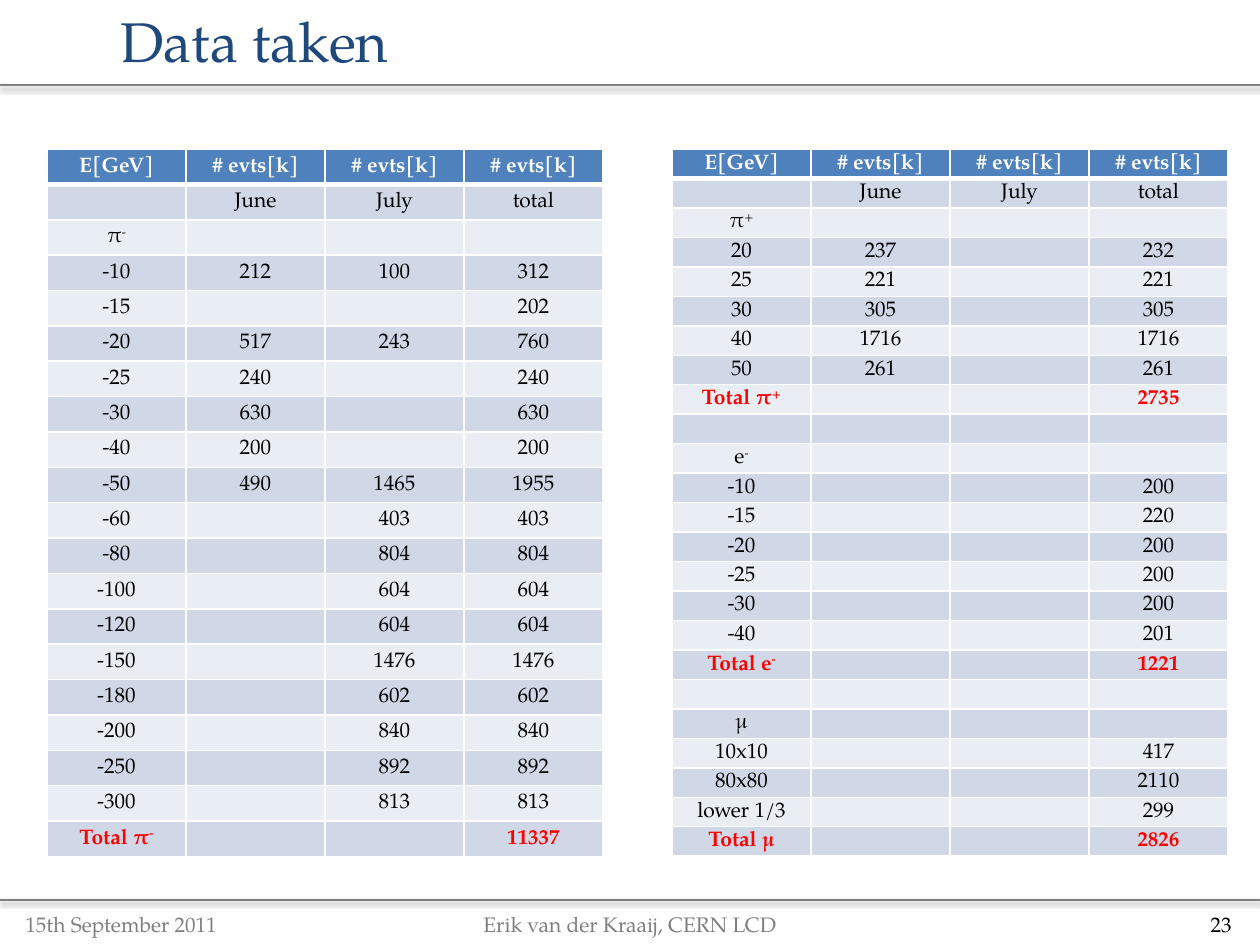
from lxml.etree import SubElement
from pptx import Presentation
from pptx.dml.color import RGBColor
from pptx.enum.shapes import MSO_CONNECTOR
from pptx.enum.text import MSO_ANCHOR as Anchor, PP_ALIGN as Align
from pptx.oxml.ns import qn
from pptx.util import Emu, Pt

WHITE = RGBColor(0xFF, 0xFF, 0xFF)
BLACK = RGBColor(0x00, 0x00, 0x00)
RED = RGBColor(0xFF, 0x00, 0x00)
NAVY = RGBColor(0x1F, 0x49, 0x7D)
HEADER_BLUE = RGBColor(0x4F, 0x81, 0xBD)
DARK_BAND = RGBColor(0xD0, 0xD8, 0xE8)
LIGHT_BAND = RGBColor(0xE9, 0xED, 0xF4)
RULE_GREY = RGBColor(0x80, 0x80, 0x80)
FOOTER_GREY = RGBColor(0x7F, 0x7F, 0x7F)

FONT = "TeX Gyre Pagella"
EMU_PER_PX = 914400 / 126
SLIDE_W, SLIDE_H = 1260, 945

HEADINGS = [
    ("E[GeV]", "# evts[k]", "# evts[k]", "# evts[k]"),
    ("", "June", "July", "total"),
]
BLANK = ("", "", "", "")


def label_row(label):
    return (label, "", "", "")


def total_row(label, total):
    return (label, "", "", total)


# A caret marks the start of a superscript.
PION_MINUS = HEADINGS + [
    label_row("π^-"),
    ("-10", "212", "100", "312"),
    total_row("-15", "202"),
    ("-20", "517", "243", "760"),
    ("-25", "240", "", "240"),
    ("-30", "630", "", "630"),
    ("-40", "200", "", "200"),
    ("-50", "490", "1465", "1955"),
    ("-60", "", "403", "403"),
    ("-80", "", "804", "804"),
    ("-100", "", "604", "604"),
    ("-120", "", "604", "604"),
    ("-150", "", "1476", "1476"),
    ("-180", "", "602", "602"),
    ("-200", "", "840", "840"),
    ("-250", "", "892", "892"),
    ("-300", "", "813", "813"),
    total_row("Total π^-", "11337"),
]
OTHER_PARTICLES = HEADINGS + [
    label_row("π^+"),
    ("20", "237", "", "232"),
    ("25", "221", "", "221"),
    ("30", "305", "", "305"),
    ("40", "1716", "", "1716"),
    ("50", "261", "", "261"),
    total_row("Total π^+", "2735"),
    BLANK,
    label_row("e^-"),
    total_row("-10", "200"),
    total_row("-15", "220"),
    total_row("-20", "200"),
    total_row("-25", "200"),
    total_row("-30", "200"),
    total_row("-40", "201"),
    total_row("Total e^-", "1221"),
    BLANK,
    label_row("μ"),
    total_row("10x10", "417"),
    total_row("80x80", "2110"),
    total_row("lower 1/3", "299"),
    total_row("Total μ", "2826"),
]


def px(length):
    return Emu(round(length * EMU_PER_PX))


class SlideBuilder:
    """Holds the text style and the slide being built."""

    def __init__(self, slide, font=FONT, size=12):
        self.slide = slide
        self.font = font
        self.size = size

    def format(self, paragraph, color, align, size=None, bold=False):
        paragraph.alignment = align
        font = paragraph.font
        font.name, font.size, font.bold = self.font, Pt(size or self.size), bold
        font.color.rgb = color

    def title(self, text, left, top, width, height):
        title = self.slide.shapes.title
        title.left, title.top, title.width, title.height = map(px, (left, top, width, height))
        title.text_frame.text = text
        title.text_frame.vertical_anchor = Anchor.MIDDLE
        self.format(title.text_frame.paragraphs[0], NAVY, Align.LEFT, size=32)

    def text(self, text, left, top, width, height, color, align):
        frame = self.slide.shapes.add_textbox(*map(px, (left, top, width, height))).text_frame
        frame.word_wrap = True
        frame.vertical_anchor = Anchor.MIDDLE
        frame.text = text
        self.format(frame.paragraphs[0], color, align)

    def rule(self, y):
        """Draw a full-width line with a soft shadow below it."""
        rule = self.slide.shapes.add_connector(
            MSO_CONNECTOR.STRAIGHT, 0, px(y), px(SLIDE_W), px(y))
        rule.line.color.rgb = RULE_GREY
        rule.line.width = Pt(1)
        effects = SubElement(rule._element.spPr, qn("a:effectLst"))
        shadow = SubElement(effects, qn("a:outerShdw"), blurRad=str(Pt(3.1)),
                            dist=str(Pt(1.6)), dir="5400000", rotWithShape="0")
        shadow_color = SubElement(shadow, qn("a:srgbClr"), val=str(BLACK))
        SubElement(shadow_color, qn("a:alpha"), val="38000")

    def table(self, rows, left, top, width, height):
        table = self.slide.shapes.add_table(
            len(rows), len(rows[0]), *map(px, (left, top, width, height))).table
        for column in table.columns:
            column.width = px(width / len(rows[0]))
        for r, values in enumerate(rows):
            table.rows[r].height = px(height / len(rows))
            is_header, is_total = r == 0, values[0].startswith("Total")
            color = WHITE if is_header else RED if is_total else BLACK
            fill = HEADER_BLUE if is_header else DARK_BAND if r % 2 else LIGHT_BAND
            for c, value in enumerate(values):
                cell = table.cell(r, c)
                self.borders(cell, top=3 if r == 1 else 1, bottom=3 if is_header else 1)
                cell.fill.solid()
                cell.fill.fore_color.rgb = fill
                self.cell_text(cell, value, color, bold=is_header or is_total)

    def borders(self, cell, top, bottom):
        properties = cell._tc.get_or_add_tcPr()
        for side, points in (("L", 1), ("R", 1), ("T", top), ("B", bottom)):
            border = SubElement(properties, qn(f"a:ln{side}"), w=str(Pt(points)))
            SubElement(SubElement(border, qn("a:solidFill")), qn("a:srgbClr"), val=str(WHITE))

    def cell_text(self, cell, value, color, bold):
        cell.vertical_anchor = Anchor.MIDDLE
        cell.margin_left = cell.margin_right = cell.margin_top = px(1)
        cell.margin_bottom = 0
        paragraph = cell.text_frame.paragraphs[0]
        self.format(paragraph, color, Align.CENTER, bold=bold)
        base, _, superscript = value.partition("^")
        if base:
            paragraph.add_run().text = base
        else:
            # The end mark keeps an empty cell from growing its row.
            SubElement(paragraph._p, qn("a:endParaRPr"), sz=str(self.size * 100))
        if superscript:
            raised = paragraph.add_run()
            raised.text = superscript
            raised.font._element.set("baseline", "30000")


def main():
    deck = Presentation()
    deck.slide_width, deck.slide_height = px(SLIDE_W), px(SLIDE_H)
    builder = SlideBuilder(deck.slides.add_slide(deck.slide_layouts[5]))

    for y in (85, 900):
        builder.rule(y)
    builder.title("Data taken", 108, 5, 922, 71)
    for rows, left in ((OTHER_PARTICLES, 672), (PION_MINUS, 47)):
        builder.table(rows, left, 149, 556, 708)
    for text, left, width, color, align in (
        ("15th September 2011", 13, 360, FOOTER_GREY, Align.LEFT),
        ("Erik van der Kraaij, CERN LCD", 430, 400, FOOTER_GREY, Align.CENTER),
        ("23", 950, 294, BLACK, Align.RIGHT),
    ):
        builder.text(text, left, 899, width, 50, color, align)

    deck.save("out.pptx")


if __name__ == "__main__":
    main()
